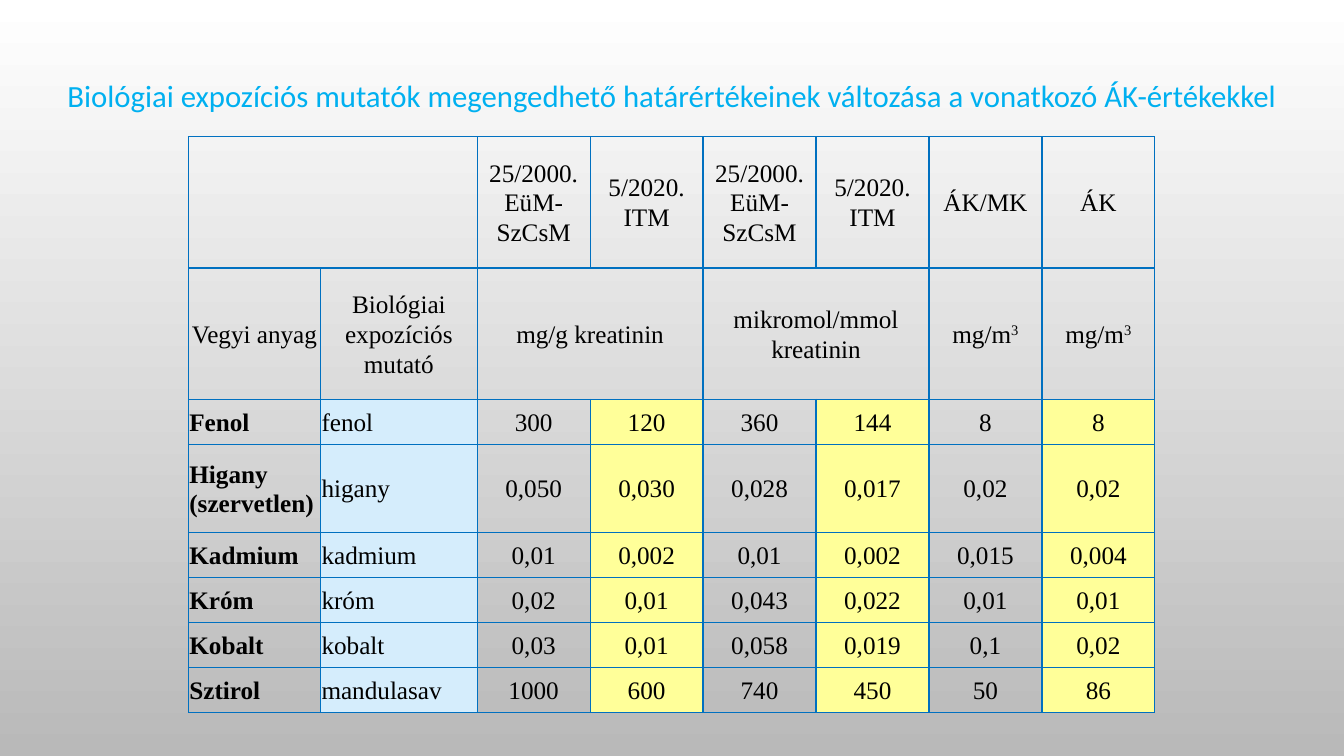
from dataclasses import dataclass

from lxml import etree
from pptx import Presentation
from pptx import util as u
from pptx.dml.color import RGBColor
from pptx.enum import text
from pptx.oxml import ns


@dataclass(frozen=True)
class Theme:
    background_top: str = "FFFFFF"
    background_bottom: str = "B9B9B9"
    title: str = "00B0F0"
    body: str = "000000"
    border: str = "0070C0"
    indicator_fill: str = "D5EDFC"
    current_fill: str = "FFFF99"
    title_font: str = "Calibri"
    table_font: str = "Times New Roman"
    title_size: int = 22
    table_size: int = 18


THEME = Theme()

TITLE = "Biológiai expozíciós mutatók megengedhető határértékeinek változása a vonatkozó ÁK-értékekkel"

# "^" marks the start of a superscript
HEADER_ROWS = [
    ["", "", "25/2000. EüM-SzCsM", "5/2020. ITM", "25/2000. EüM-SzCsM", "5/2020. ITM", "ÁK/MK", "ÁK"],
    ["Vegyi anyag", "Biológiai expozíciós mutató", "mg/g kreatinin", "",
     "mikromol/mmol kreatinin", "", "mg/m^3", "mg/m^3"],
]
LIMIT_ROWS = [
    ["Fenol", "fenol", "300", "120", "360", "144", "8", "8"],
    ["Higany (szervetlen)", "higany", "0,050", "0,030", "0,028", "0,017", "0,02", "0,02"],
    ["Kadmium", "kadmium", "0,01", "0,002", "0,01", "0,002", "0,015", "0,004"],
    ["Króm", "króm", "0,02", "0,01", "0,043", "0,022", "0,01", "0,01"],
    ["Kobalt", "kobalt", "0,03", "0,01", "0,058", "0,019", "0,1", "0,02"],
    ["Sztirol", "mandulasav", "1000", "600", "740", "450", "50", "86"],
]
MERGED_PAIRS = [(0, 0), (1, 2), (1, 4)]
CURRENT_COLUMNS = (3, 5, 7)
COLUMN_WIDTHS = [94.4, 111.9] + [80.7] * 6
ROW_HEIGHTS = [93.9, 93.9, 32.1, 62.9] + [32.1] * 4


def style_run(run, font_name, size, color, bold=False):
    font = run.font
    font.name = font_name
    font.size = u.Pt(size)
    font.bold = bold
    font.color.rgb = RGBColor.from_string(color)


def add_background(slide):
    fill = slide.background.fill
    fill.gradient()
    fill.gradient_angle = 270
    for stop, color in zip(fill.gradient_stops, (THEME.background_top, THEME.background_bottom)):
        stop.color.rgb = RGBColor.from_string(color)


def add_title(slide, left, top, width, height):
    shape = slide.shapes.add_textbox(u.Pt(left), u.Pt(top), u.Pt(width), u.Pt(height))
    frame = shape.text_frame
    frame.word_wrap = True
    frame.text = TITLE
    paragraph = frame.paragraphs[0]
    paragraph.alignment = text.PP_ALIGN.CENTER
    paragraph.line_spacing = 1.3
    style_run(paragraph.runs[0], THEME.title_font, THEME.title_size, THEME.title)


def add_borders(cell):
    # Border lines come before the fill in the cell properties
    properties = cell._tc.get_or_add_tcPr()
    for index, side in enumerate(("lnL", "lnR", "lnT", "lnB")):
        line = etree.Element(ns.qn(f"a:{side}"), w=str(u.Pt(1)))
        solid = etree.SubElement(line, ns.qn("a:solidFill"))
        etree.SubElement(solid, ns.qn("a:srgbClr"), val=THEME.border)
        properties.insert(index, line)


def fill_cell(cell, content, alignment, bold, color):
    cell.margin_left = cell.margin_right = cell.margin_top = cell.margin_bottom = u.Pt(0.7)
    cell.vertical_anchor = text.MSO_ANCHOR.MIDDLE
    if color:
        cell.fill.solid()
        cell.fill.fore_color.rgb = RGBColor.from_string(color)
    else:
        cell.fill.background()
    add_borders(cell)
    if not content:
        return
    base, _, superscript = content.partition("^")
    cell.text_frame.text = base
    paragraph = cell.text_frame.paragraphs[0]
    paragraph.alignment = alignment
    paragraph.line_spacing = 1.07
    paragraph.space_after = u.Pt(8)
    if superscript:
        run = paragraph.add_run()
        run.text = superscript
        run._r.get_or_add_rPr().set("baseline", "30000")
    for run in paragraph.runs:
        style_run(run, THEME.table_font, THEME.table_size, THEME.body, bold)


def add_limits_table(slide, left, top):
    rows = HEADER_ROWS + LIMIT_ROWS
    frame = slide.shapes.add_table(len(rows), len(COLUMN_WIDTHS), u.Pt(left), u.Pt(top),
                                   u.Pt(sum(COLUMN_WIDTHS)), u.Pt(sum(ROW_HEIGHTS)))
    table = frame.table
    table.first_row = table.horz_banding = False
    for column, width in zip(table.columns, COLUMN_WIDTHS):
        column.width = u.Pt(width)
    for row, height in zip(table.rows, ROW_HEIGHTS):
        row.height = u.Pt(height)

    # Contents, with the limits now in force highlighted
    for row_index, row in enumerate(rows):
        is_limit = row_index >= len(HEADER_ROWS)
        for column_index, content in enumerate(row):
            is_name = is_limit and column_index < 2
            color = None
            if is_limit and column_index == 1:
                color = THEME.indicator_fill
            elif is_limit and column_index in CURRENT_COLUMNS:
                color = THEME.current_fill
            alignment = text.PP_ALIGN.LEFT if is_name else text.PP_ALIGN.CENTER
            fill_cell(table.cell(row_index, column_index), content, alignment,
                      is_name and column_index == 0, color)

    # Header cells that cover two columns
    for row_index, column_index in MERGED_PAIRS:
        table.cell(row_index, column_index).merge(table.cell(row_index, column_index + 1))


def main():
    presentation = Presentation()
    presentation.slide_width = u.Pt(960)
    presentation.slide_height = u.Pt(540)
    slide = presentation.slides.add_slide(presentation.slide_layouts[6])
    add_background(slide)
    add_title(slide, 35.3, 43.2, 889.2, 41.8)
    add_limits_table(slide, 134.6, 97.6)
    presentation.save("out.pptx")


if __name__ == "__main__":
    main()
